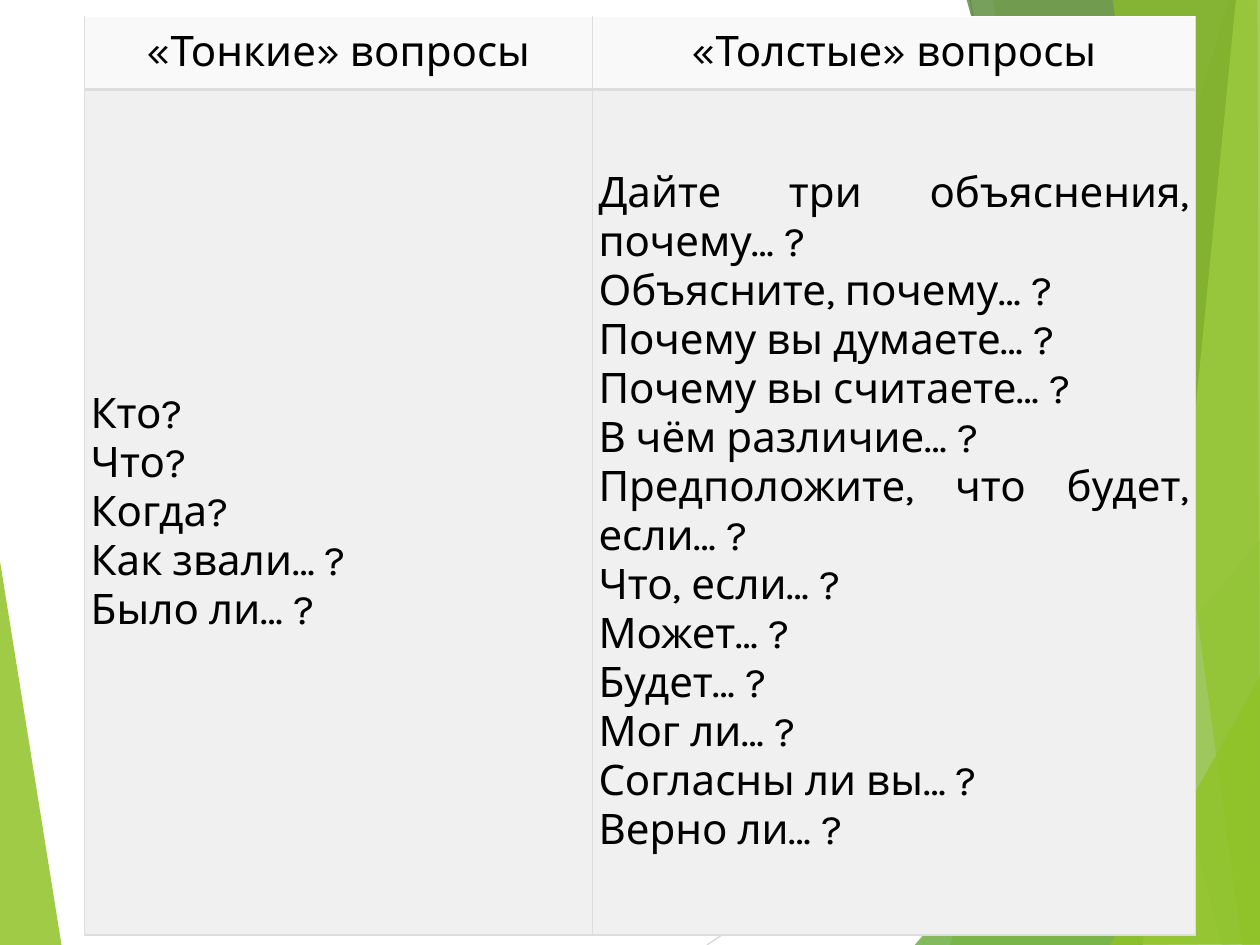
from dataclasses import dataclass

from lxml import etree
from pptx import Presentation
from pptx.dml.color import RGBColor
from pptx.enum.shapes import MSO_CONNECTOR
from pptx.enum.text import MSO_ANCHOR, PP_ALIGN
from pptx.oxml.ns import qn
from pptx.util import Emu, Pt

PX = 9144  # EMU in one px, 100 px to the inch
WIDTH, HEIGHT = 1000, 750

LIME = RGBColor(0x90, 0xC2, 0x26)
GREEN = RGBColor(0x54, 0xA0, 0x21)
DARK_GREEN = RGBColor(0x3F, 0x78, 0x19)
PALE_LIME = RGBColor(0xC0, 0xE4, 0x74)
LIGHT_GREY = RGBColor(0xD9, 0xD9, 0xD9)
MID_GREY = RGBColor(0xBF, 0xBF, 0xBF)
BORDER_GREY = RGBColor(0xDD, 0xDD, 0xDD)
HEADER_FILL = RGBColor(0xF9, 0xF9, 0xF9)
BODY_FILL = RGBColor(0xF0, 0xF0, 0xF0)
BLACK = RGBColor(0, 0, 0)

FONT = "Karla"
FONT_SIZE = 24
CELL_MARGIN = 5


@dataclass(frozen=True)
class Facet:
    points: tuple
    color: RGBColor
    opacity: int  # percent


@dataclass(frozen=True)
class Ray:
    start: tuple
    end: tuple
    color: RGBColor


@dataclass(frozen=True)
class RowStyle:
    height: int
    fill: RGBColor
    align: PP_ALIGN
    borders: dict  # side -> width in points


LEFT_FACET = Facet(((-1, 439), (49, 751), (-1, 750)), LIME, 85)
RAYS = (
    Ray((561, 750), (1001, 457), LIGHT_GREY),
    Ray((770, 0), (904, 750), MID_GREY),
)
RIGHT_FACETS = (
    Facet(((975, 0), (754, 750), (1002, 751), (1001, 1)), LIME, 30),
    Facet(((788, -1), (919, 750), (1001, 750), (1001, -1)), LIME, 20),
    Facet(((726, 750), (1000, 429), (1001, 750)), GREEN, 72),
    Facet(((767, -1), (970, 750), (1001, 749), (1001, -1)), DARK_GREEN, 70),
    Facet(((981, -1), (907, 750), (1001, 750), (1000, -1)), PALE_LIME, 70),
    Facet(((883, -1), (986, 750), (1000, 750), (998, -1)), LIME, 65),
    Facet(((881, 750), (1001, 535), (1001, 749)), LIME, 80),
)

TABLE_LEFT, TABLE_TOP = 67, 13
COLUMN_WIDTHS = (403, 479)
ROW_STYLES = (
    RowStyle(58, HEADER_FILL, PP_ALIGN.CENTER, {"L": 0.75, "R": 0.75, "B": 1.5}),
    RowStyle(671, BODY_FILL, PP_ALIGN.JUSTIFY,
             {"L": 0.75, "R": 0.75, "T": 1.5, "B": 1.5}),
)
QUESTIONS = (
    (("«Тонкие» вопросы",), ("«Толстые» вопросы",)),
    (
        ("Кто?", "Что?", "Когда?", "Как звали… ?", "Было ли… ?"),
        (
            "Дайте три объяснения, почему… ?",
            "Объясните, почему… ?",
            "Почему вы думаете… ?",
            "Почему вы считаете… ?",
            "В чём различие… ?",
            "Предположите, что будет, если… ?",
            "Что, если… ?",
            "Может… ?",
            "Будет… ?",
            "Мог ли… ?",
            "Согласны ли вы… ?",
            "Верно ли… ?",
        ),
    ),
)


def px(length: int) -> Emu:
    return Emu(length * PX)


def draw_facet(slide, facet: Facet) -> None:
    first, *others = facet.points
    outline = slide.shapes.build_freeform(*first, scale=PX)
    outline.add_line_segments(others, close=True)
    shape = outline.convert_to_shape()
    shape.shadow.inherit = False
    shape.line.fill.background()
    shape.fill.solid()
    shape.fill.fore_color.rgb = facet.color
    color = shape.fill._xPr.find(qn("a:solidFill"))[0]
    etree.SubElement(color, qn("a:alpha"), val=str(facet.opacity * 1000))


def draw_ray(slide, ray: Ray) -> None:
    line = slide.shapes.add_connector(
        MSO_CONNECTOR.STRAIGHT, *map(px, ray.start + ray.end))
    line.line.color.rgb = ray.color
    line.line.width = Pt(0.75)
    etree.SubElement(line._element.spPr, qn("a:effectLst"))


def draw_borders(cell, borders: dict) -> None:
    properties = cell._tc.get_or_add_tcPr()
    for position, (side, width) in enumerate(borders.items()):
        border = etree.Element(qn(f"a:ln{side}"), w=str(Pt(width)))
        fill = etree.SubElement(border, qn("a:solidFill"))
        etree.SubElement(fill, qn("a:srgbClr"), val=str(BORDER_GREY))
        properties.insert(position, border)


def fill_cell(cell, lines: tuple, style: RowStyle) -> None:
    cell.fill.solid()
    cell.fill.fore_color.rgb = style.fill
    draw_borders(cell, style.borders)
    cell.vertical_anchor = MSO_ANCHOR.MIDDLE
    cell.margin_left = cell.margin_right = px(CELL_MARGIN)
    cell.margin_top = cell.margin_bottom = px(CELL_MARGIN)
    frame = cell.text_frame
    for index, line in enumerate(lines):
        paragraph = frame.add_paragraph() if index else frame.paragraphs[0]
        paragraph.alignment = style.align
        run = paragraph.add_run()
        run.text = line
        run.font.name = FONT
        run.font.size = Pt(FONT_SIZE)
        run.font.color.rgb = BLACK


def draw_questions(slide) -> None:
    height = sum(style.height for style in ROW_STYLES)
    table = slide.shapes.add_table(
        len(ROW_STYLES), len(COLUMN_WIDTHS), px(TABLE_LEFT), px(TABLE_TOP),
        px(sum(COLUMN_WIDTHS)), px(height)).table
    table.first_row = table.horz_banding = False
    for column, width in zip(table.columns, COLUMN_WIDTHS):
        column.width = px(width)
    for row, style, contents in zip(table.rows, ROW_STYLES, QUESTIONS):
        row.height = px(style.height)
        for cell, lines in zip(row.cells, contents):
            fill_cell(cell, lines, style)


def main() -> None:
    deck = Presentation()
    deck.slide_width, deck.slide_height = px(WIDTH), px(HEIGHT)
    slide = deck.slides.add_slide(deck.slide_layouts[6])

    # Faceted backdrop
    draw_facet(slide, LEFT_FACET)
    for ray in RAYS:
        draw_ray(slide, ray)
    for facet in RIGHT_FACETS:
        draw_facet(slide, facet)

    # Table of the two kinds of questions
    draw_questions(slide)
    deck.save("out.pptx")


if __name__ == "__main__":
    main()
